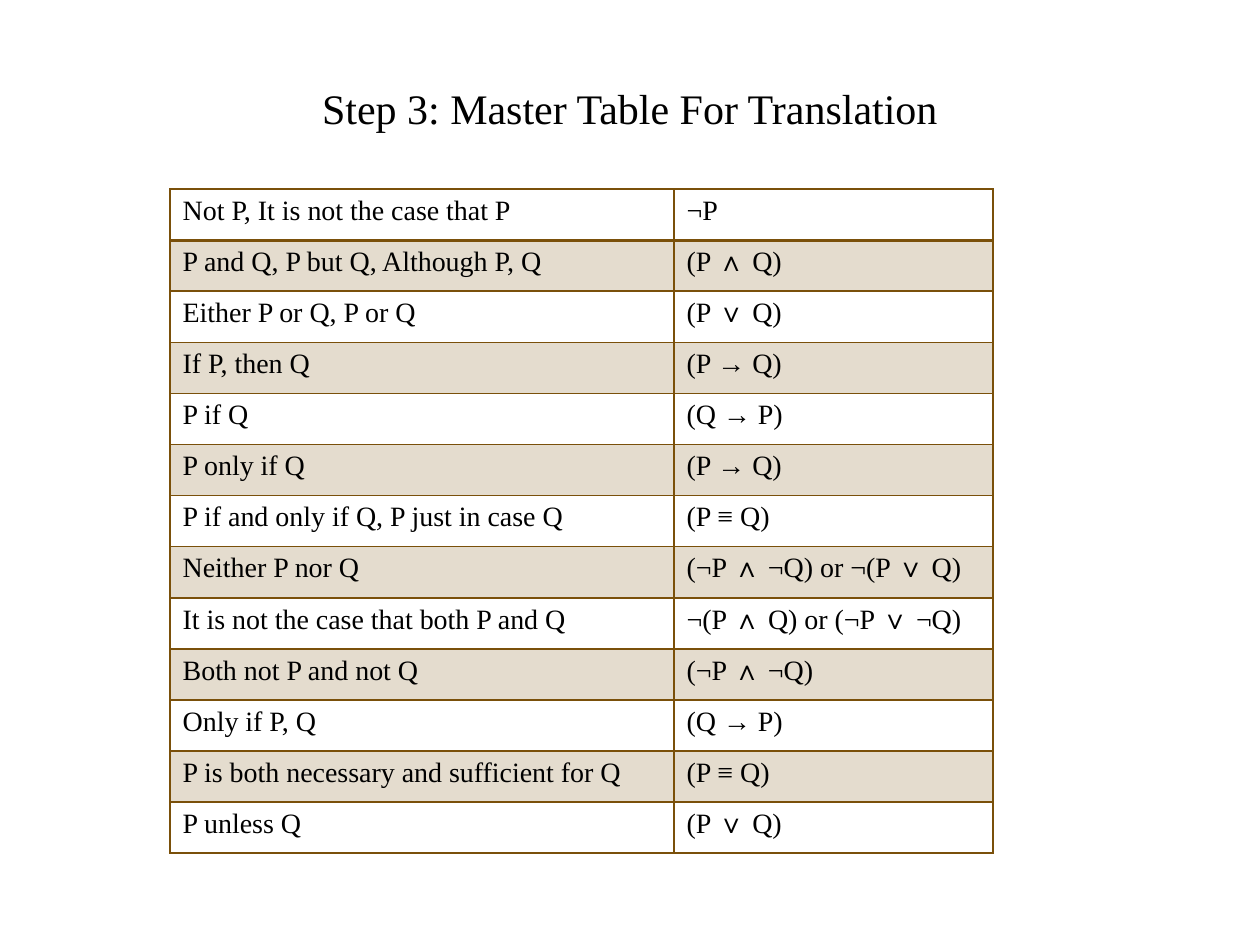
from lxml.etree import SubElement
from pptx import Presentation
from pptx.dml.color import RGBColor
from pptx.enum.text import MSO_ANCHOR, PP_ALIGN
from pptx.oxml import parse_xml
from pptx.oxml.ns import nsdecls, qn
from pptx.util import Pt

FONT = "Times New Roman"
BROWN = "7A500A"
BLACK = "000000"
COL_WIDTHS = (288, 182.16)
ROW_HEIGHT = 29.2
TRANSLATIONS = [
    ("Not P, It is not the case that P", "¬P"),
    ("P and Q, P but Q, Although P, Q", "(P ∧ Q)"),
    ("Either P or Q, P or Q", "(P ∨ Q)"),
    ("If P, then Q", "(P → Q)"),
    ("P if Q", "(Q → P)"),
    ("P only if Q", "(P → Q)"),
    ("P if and only if Q, P just in case Q", "(P ≡ Q)"),
    ("Neither P nor Q", "(¬P ∧ ¬Q) or ¬(P ∨ Q)"),
    ("It is not the case that both P and Q", "¬(P ∧ Q) or (¬P ∨ ¬Q)"),
    ("Both not P and not Q", "(¬P ∧ ¬Q)"),
    ("Only if P, Q", "(Q → P)"),
    ("P is both necessary and sufficient for Q", "(P ≡ Q)"),
    ("P unless Q", "(P ∨ Q)"),
]


def rgb(color):
    """Turn a hex string into a colour."""
    return RGBColor.from_string(color)


def style_paragraph(p, size):
    """Give a paragraph the slide's font."""
    p.font.name = FONT
    p.font.size = Pt(size)
    p.font.bold = False
    p.font.color.rgb = rgb(BLACK)


def set_borders(cell, top, bottom):
    """Draw the four borders of a cell, with widths in points."""
    tc_pr = cell._tc.get_or_add_tcPr()
    widths = {"lnL": 1, "lnR": 1, "lnT": top, "lnB": bottom}
    for i, (tag, width) in enumerate(widths.items()):
        tc_pr.insert(i, parse_xml(
            f'<a:{tag} {nsdecls("a")} w="{Pt(width)}"><a:solidFill>'
            f'<a:srgbClr val="{BROWN}"/></a:solidFill></a:{tag}>'))


def fill_band(cell, shaded):
    """Tint a shaded cell and leave the others clear."""
    if not shaded:
        cell.fill.background()
        return
    cell.fill.solid()
    cell.fill.fore_color.rgb = rgb(BROWN)
    color = cell._tc.tcPr.find(qn("a:solidFill")).find(qn("a:srgbClr"))
    SubElement(color, qn("a:alpha"), val="20000")


def add_title(s, text, x, y, w, h):
    """Add the centred slide title."""
    tf = s.shapes.add_textbox(Pt(x), Pt(y), Pt(w), Pt(h)).text_frame
    tf.word_wrap = True
    tf.vertical_anchor = MSO_ANCHOR.TOP
    tf.margin_top = Pt(7.4)
    p = tf.paragraphs[0]
    p.text = text
    p.alignment = PP_ALIGN.CENTER
    style_paragraph(p, 24)


def add_translation_table(s, rows, x, y):
    """Add the banded table of phrases and formulas."""
    table = s.shapes.add_table(
        len(rows), len(COL_WIDTHS), Pt(x), Pt(y),
        Pt(sum(COL_WIDTHS)), Pt(ROW_HEIGHT * len(rows))).table
    table.first_row = False
    table.horz_banding = False
    for column, width in zip(table.columns, COL_WIDTHS):
        column.width = Pt(width)
    for i, texts in enumerate(rows):
        table.rows[i].height = Pt(ROW_HEIGHT)
        for j, text in enumerate(texts):
            cell = table.cell(i, j)
            cell.text = text
            style_paragraph(cell.text_frame.paragraphs[0], 16)
            fill_band(cell, shaded=i % 2 == 1)
            set_borders(cell, top=2 if i == 1 else 1, bottom=2 if i == 0 else 1)


def main():
    """Build and save the slide."""
    prs = Presentation()
    prs.slide_width, prs.slide_height = Pt(720), Pt(540)
    s = prs.slides.add_slide(prs.slide_layouts[6])
    add_title(s, "Step 3: Master Table For Translation", 72, 39.6, 576, 68.4)
    add_translation_table(s, TRANSLATIONS, 97.2, 108)
    prs.save("out.pptx")


if __name__ == "__main__":
    main()
